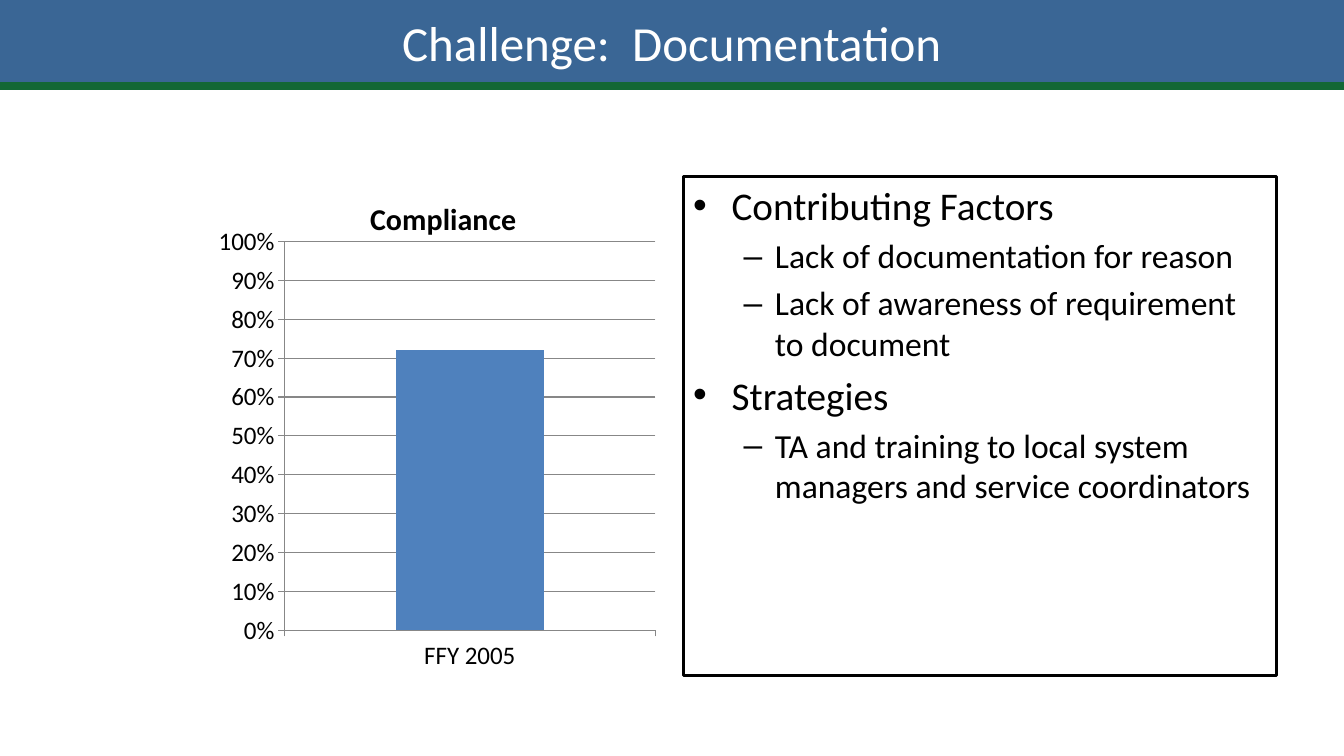
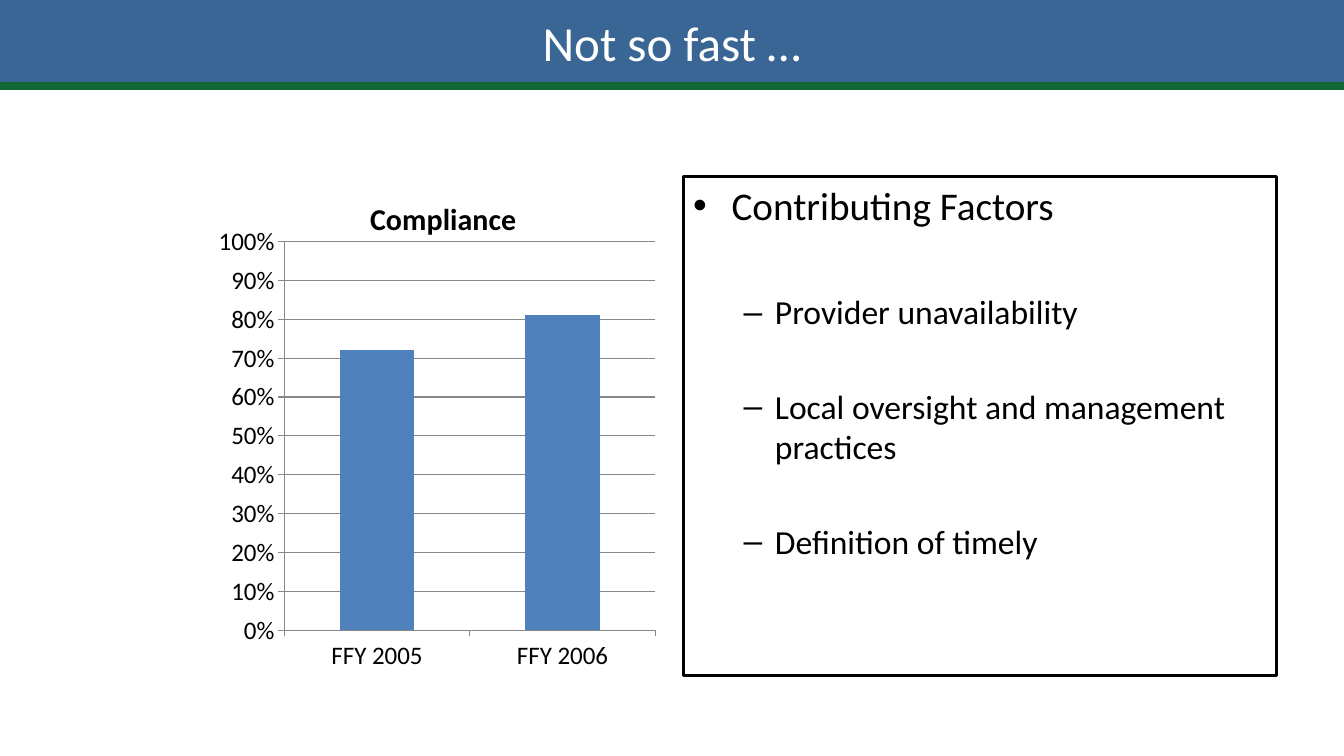
from dataclasses import dataclass

from lxml import etree
from pptx import Presentation
from pptx.chart.data import CategoryChartData
from pptx.dml.color import RGBColor
from pptx.enum.chart import XL_CHART_TYPE, XL_TICK_MARK
from pptx.enum.shapes import MSO_SHAPE
from pptx.enum.text import MSO_ANCHOR, PP_ALIGN
from pptx.oxml import parse_xml
from pptx.oxml.ns import nsdecls, qn
from pptx.util import Cm, Pt

COLUMNS = XL_CHART_TYPE.COLUMN_CLUSTERED
TICK_OUTSIDE = XL_TICK_MARK.OUTSIDE
RECTANGLE = MSO_SHAPE.RECTANGLE
MIDDLE = MSO_ANCHOR.MIDDLE
TOP = MSO_ANCHOR.TOP
CENTER = PP_ALIGN.CENTER
LEFT = PP_ALIGN.LEFT


@dataclass(frozen=True)
class Theme:
    font: str = "Calibri"
    blue: RGBColor = RGBColor(0x3A, 0x66, 0x95)
    green: RGBColor = RGBColor(0x13, 0x67, 0x35)
    column: RGBColor = RGBColor(0x4F, 0x81, 0xBD)
    grid: RGBColor = RGBColor(0x87, 0x87, 0x87)
    ink: RGBColor = RGBColor(0, 0, 0)
    paper: RGBColor = RGBColor(0xFF, 0xFF, 0xFF)
    title_size: float = 35
    chart_size: float = 18
    chart_title_size: float = 21.6
    line_width: float = 2
    before_ratio: float = 0.2


@dataclass(frozen=True)
class Level:
    bullet: str
    size: float
    margin: float
    hanging: float


THEME = Theme()
LEVELS = (Level("•", 28, 0.97, 0.97), Level("–", 24, 2.06, 0.79))
PAGE_WIDTH, PAGE_HEIGHT = 33.87, 19.05
BAND_HEIGHT, STRIPE_HEIGHT = 2.11, 0.13
CONTENT_TOP, CONTENT_HEIGHT = 4.45, 12.57
CHART_BOX = (5.51, CONTENT_TOP, 11.23, CONTENT_HEIGHT)
PANEL_BOX = (17.22, CONTENT_TOP, 14.96, CONTENT_HEIGHT)
PLOT_AREA = {"x": 0.14, "y": 0.13, "w": 0.84, "h": 0.78}


def set_format(target, values):
    for name, value in values.items():
        setattr(target, name, value)


def style_font(font, size, color, bold=False):
    set_format(font, {"name": THEME.font, "size": Pt(size), "bold": bold})
    font.color.rgb = color


def paint(shape, fill, line):
    shape.fill.solid()
    shape.fill.fore_color.rgb = fill
    shape.line.color.rgb = line
    shape.line.width = Pt(THEME.line_width)


def add_band(page, top, height, color):
    band = page.shapes.add_shape(RECTANGLE, 0, Cm(top), Cm(PAGE_WIDTH), Cm(height))
    band.shadow.inherit = False
    paint(band, color, color)


def add_text(para, text, size, color):
    span = para.add_run()
    span.text = text
    style_font(span.font, size, color)


def add_title(page, text):
    add_band(page, 0, BAND_HEIGHT, THEME.blue)
    add_band(page, BAND_HEIGHT, STRIPE_HEIGHT, THEME.green)
    box = page.shapes.add_textbox(0, 0, Cm(PAGE_WIDTH), Cm(BAND_HEIGHT))
    set_format(box.text_frame, {"word_wrap": True, "vertical_anchor": MIDDLE})
    para = box.text_frame.paragraphs[0]
    para.alignment = CENTER
    add_text(para, text, THEME.title_size, THEME.paper)


def set_bullet(para, level):
    properties = para._p.get_or_add_pPr()
    properties.set("marL", str(Cm(level.margin)))
    properties.set("indent", str(-Cm(level.hanging)))
    etree.SubElement(properties, qn("a:buFont")).set("typeface", "Arial")
    etree.SubElement(properties, qn("a:buChar")).set("char", level.bullet)


def add_panel(page, items):
    box = page.shapes.add_textbox(*map(Cm, PANEL_BOX))
    paint(box, THEME.paper, THEME.ink)
    frame = box.text_frame
    set_format(frame, {"word_wrap": True, "vertical_anchor": TOP})
    for index, (depth, text, gap) in enumerate(items):
        para = frame.add_paragraph() if index else frame.paragraphs[0]
        level = LEVELS[depth]
        before = Pt(level.size * THEME.before_ratio + gap)
        set_format(para, {"level": depth, "alignment": LEFT, "space_before": before})
        set_bullet(para, level)
        add_text(para, text, level.size, THEME.ink)


def place_plot(chart):
    plot_area = chart._chartSpace.chart.plotArea
    for layout in plot_area.findall(qn("c:layout")):
        plot_area.remove(layout)
    entries = {"layoutTarget": "inner", "xMode": "edge", "yMode": "edge", **PLOT_AREA}
    inner = "".join(f'<c:{name} val="{value}"/>' for name, value in entries.items())
    plot_area.insert(0, parse_xml(
        f'<c:layout {nsdecls("c")}><c:manualLayout>{inner}</c:manualLayout></c:layout>'))


def style_axis(axis):
    axis.major_tick_mark = TICK_OUTSIDE
    axis.format.line.color.rgb = THEME.grid
    style_font(axis.tick_labels.font, THEME.chart_size, THEME.ink)


def add_compliance_chart(page, rates):
    data = CategoryChartData(number_format="0%")
    data.categories = list(rates)
    data.add_series("Compliance", list(rates.values()))
    chart = page.shapes.add_chart(COLUMNS, *map(Cm, CHART_BOX), data).chart
    style_font(chart.font, THEME.chart_size, THEME.ink)
    set_format(chart, {"has_legend": False, "has_title": True})
    chart.chart_title.include_in_layout = False
    heading = chart.chart_title.text_frame
    heading.text = "Compliance"
    style_font(heading.paragraphs[0].runs[0].font, THEME.chart_title_size, THEME.ink, True)

    style_axis(chart.category_axis)
    scale = chart.value_axis
    style_axis(scale)
    set_format(scale, {"minimum_scale": 0, "maximum_scale": 1, "major_unit": 0.1,
                       "has_major_gridlines": True})
    scale.major_gridlines.format.line.color.rgb = THEME.grid
    set_format(scale.tick_labels, {"number_format": "0%", "number_format_is_linked": False})

    plot = chart.plots[0]
    set_format(plot, {"gap_width": 150, "vary_by_categories": False})
    fill = plot.series[0].format.fill
    fill.solid()
    fill.fore_color.rgb = THEME.column
    place_plot(chart)


def add_page(deck, title, rates, items):
    page = deck.slides.add_slide(deck.slide_layouts[6])
    add_title(page, title)
    add_compliance_chart(page, rates)
    add_panel(page, items)


def main():
    deck = Presentation()
    set_format(deck, {"slide_width": Cm(PAGE_WIDTH), "slide_height": Cm(PAGE_HEIGHT)})
    add_page(deck, "Challenge:  Documentation", {"FFY 2005": 0.72}, [
        (0, "Contributing Factors", 0),
        (1, "Lack of documentation for reason", 0),
        (1, "Lack of awareness of requirement to document", 0),
        (0, "Strategies", 0),
        (1, "TA and training to local system managers and service coordinators", 0),
    ])
    add_page(deck, "Not so fast …", {"FFY 2005": 0.72, "FFY 2006": 0.81}, [
        (0, "Contributing Factors", 0),
        (1, "Provider unavailability", 40),
        (1, "Local oversight and management practices", 34),
        (1, "Definition of timely", 34),
    ])
    deck.save("out.pptx")


if __name__ == "__main__":
    main()
